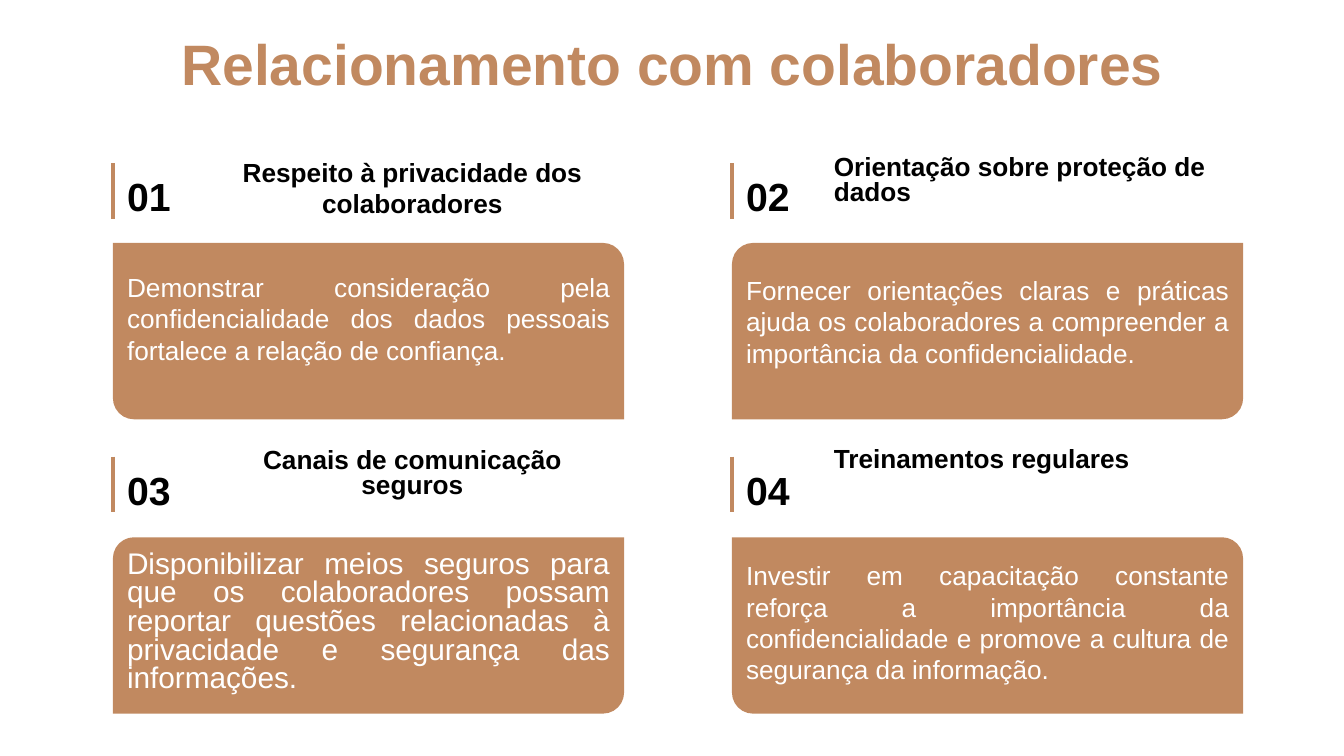
from dataclasses import dataclass

from lxml import etree
from pptx import Presentation
from pptx.dml.color import RGBColor
from pptx.enum.shapes import MSO_CONNECTOR, MSO_SHAPE
from pptx.enum.text import MSO_AUTO_SIZE, PP_ALIGN
from pptx.oxml.ns import qn
from pptx.util import Inches, Pt

STRAIGHT = MSO_CONNECTOR.STRAIGHT
DIAGONAL_ROUNDED = MSO_SHAPE.ROUND_2_DIAG_RECTANGLE
GROW = MSO_AUTO_SIZE.SHAPE_TO_FIT_TEXT
LEFT, CENTER, JUSTIFY = PP_ALIGN.LEFT, PP_ALIGN.CENTER, PP_ALIGN.JUSTIFY

COLORS = {"accent": "C18960", "ink": "000000", "paper": "FFFFFF"}
COLUMNS = (1.12, 7.26)
CARD_TOPS = (2.41, 5.33)
HEADER_TOPS = (1.41, 4.32)
CARD_WIDTH, CARD_HEIGHT, CORNER = 5.07, 1.75, 0.12
HEADING_OFFSET, HEADING_WIDTH = 0.87, 4.2


@dataclass
class Topic:
    heading: str
    body: str
    heading_height: float
    body_top: float
    body_height: float
    heading_align: int = LEFT
    heading_spacing: float = 0.8
    body_size: float = 18.7
    body_spacing: float = 1.0


TOPICS = (
    Topic("Respeito à privacidade dos colaboradores",
          "Demonstrar consideração pela confidencialidade dos dados pessoais "
          "fortalece a relação de confiança.",
          0.91, 2.55, 1.22, heading_align=CENTER, heading_spacing=1.0),
    Topic("Orientação sobre proteção de dados",
          "Fornecer orientações claras e práticas ajuda os colaboradores a "
          "compreender a importância da confidencialidade.",
          0.79, 2.58, 1.22),
    Topic("Canais de comunicação seguros",
          "Disponibilizar meios seguros para que os colaboradores possam reportar "
          "questões relacionadas à privacidade e segurança das informações.",
          0.79, 5.33, 1.72, heading_align=CENTER, body_size=21.3, body_spacing=0.8),
    Topic("Treinamentos regulares",
          "Investir em capacitação constante reforça a importância da "
          "confidencialidade e promove a cultura de segurança da informação.",
          0.54, 5.41, 1.54),
)


class TopicSlide:
    font = "Arial"
    inset = Inches(0.14)
    space_before = Pt(5)

    def __init__(self, slide):
        self.slide = slide

    @staticmethod
    def color(name):
        return RGBColor.from_string(COLORS[name])

    def text(self, words, left, top, width, height, *, size, color="ink",
             bold=False, align=LEFT, spacing=1.0):
        box = self.slide.shapes.add_textbox(
            Inches(left), Inches(top), Inches(width), Inches(height))
        frame = box.text_frame
        frame.word_wrap = True
        frame.auto_size = GROW
        frame.margin_left = frame.margin_right = self.inset
        frame.margin_top = frame.margin_bottom = self.inset
        paragraph = frame.paragraphs[0]
        paragraph.alignment = align
        paragraph.line_spacing = spacing
        paragraph.space_before = self.space_before
        run = paragraph.add_run()
        run.text = words
        run.font.name = self.font
        run.font.size = Pt(size)
        run.font.bold = bold
        run.font.color.rgb = self.color(color)

    def card(self, left, top, rising):
        """Round the top-right and bottom-left corners if rising, else the other two."""
        card = self.slide.shapes.add_shape(
            DIAGONAL_ROUNDED, Inches(left), Inches(top),
            Inches(CARD_WIDTH), Inches(CARD_HEIGHT))
        card.adjustments[0] = 0 if rising else CORNER
        card.adjustments[1] = CORNER if rising else 0
        card.shadow.inherit = False
        card.fill.solid()
        card.fill.fore_color.rgb = self.color("accent")
        card.line.fill.background()

    def bar(self, left, top, height):
        bar = self.slide.shapes.add_connector(
            STRAIGHT, Inches(left), Inches(top), Inches(left), Inches(top + height))
        bar.line.color.rgb = self.color("accent")
        bar.line.width = Pt(3)
        etree.SubElement(bar._element.spPr, qn("a:effectLst"))

    def topic(self, index, topic):
        row, column = divmod(index, 2)
        left, header_top = COLUMNS[column], HEADER_TOPS[row]
        self.card(left, CARD_TOPS[row], rising=row == column)
        self.bar(left, header_top + 0.21, 0.55)
        self.text(f"{index + 1:02}", left, header_top + 0.07, 0.83, 0.81,
                  size=28, bold=True, spacing=1.2)
        self.text(topic.heading, left + HEADING_OFFSET, header_top,
                  HEADING_WIDTH, topic.heading_height, size=18.7, bold=True,
                  align=topic.heading_align, spacing=topic.heading_spacing)
        self.text(topic.body, left, topic.body_top, CARD_WIDTH, topic.body_height,
                  size=topic.body_size, color="paper", align=JUSTIFY,
                  spacing=topic.body_spacing)


def main():
    deck = Presentation()
    deck.slide_width, deck.slide_height = Inches(13.33), Inches(7.5)
    page = TopicSlide(deck.slides.add_slide(deck.slide_layouts[6]))
    page.text("Relacionamento com colaboradores", 0.93, 0.27, 11.47, 0.84,
              size=40.7, color="accent", bold=True, align=CENTER, spacing=0.8)
    for index, topic in enumerate(TOPICS):
        page.topic(index, topic)
    deck.save("out.pptx")


if __name__ == "__main__":
    main()
